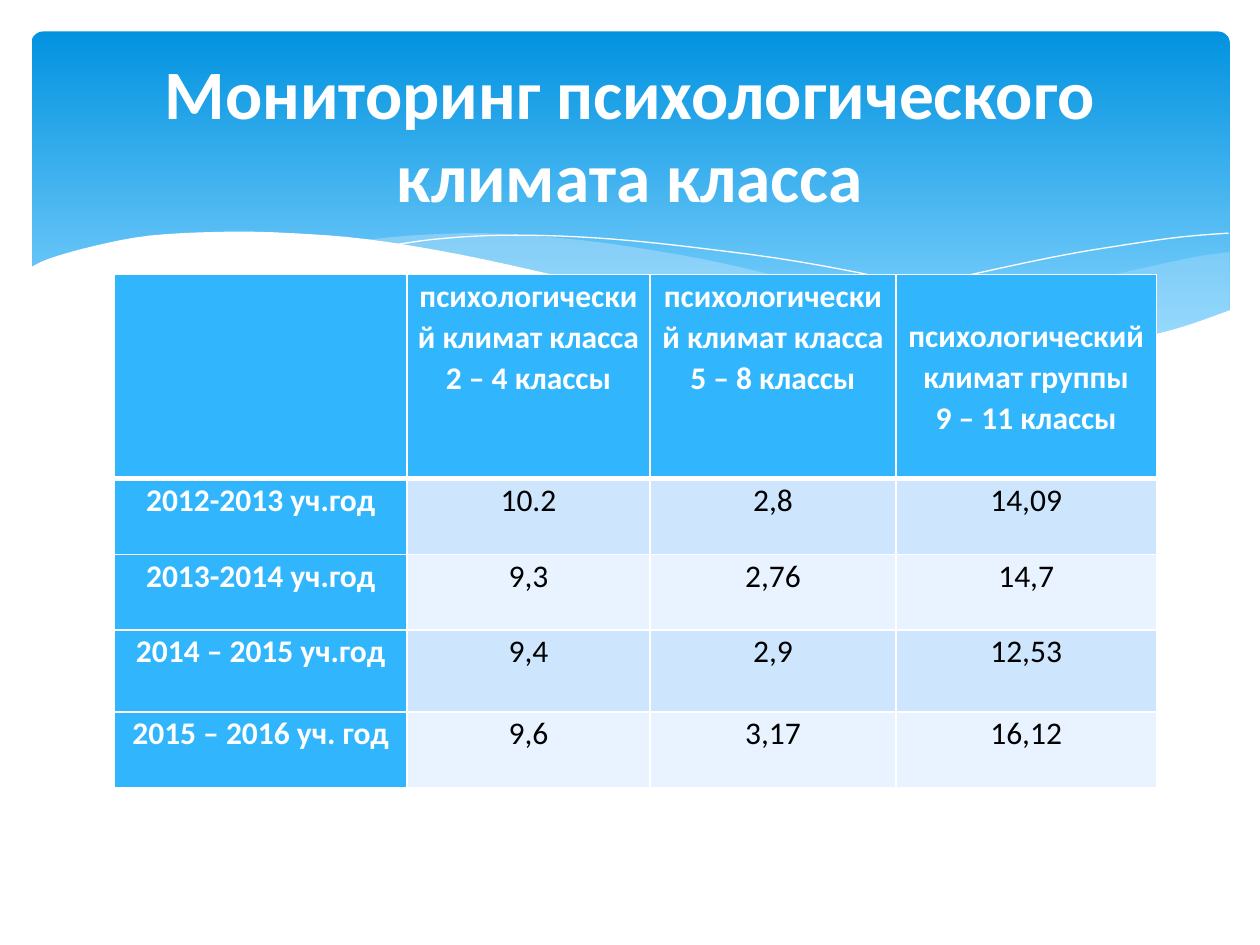
from dataclasses import dataclass

from lxml import etree
from pptx import Presentation
from pptx.dml.color import RGBColor
from pptx.enum.shapes import MSO_SHAPE
from pptx.enum.text import MSO_ANCHOR, PP_ALIGN
from pptx.oxml.ns import qn
from pptx.slide import Slide
from pptx.util import Inches, Pt

ROUNDED = MSO_SHAPE.ROUNDED_RECTANGLE
CENTER = PP_ALIGN.CENTER
TOP, MIDDLE = MSO_ANCHOR.TOP, MSO_ANCHOR.MIDDLE

COLORS = {
    "white": "FFFFFF", "black": "000000", "sky_dark": "0293E0", "sky_light": "83D3FE",
    "wave": "C6E7FC", "header": "31B6FD", "band_a": "CEE5FE", "band_b": "E8F3FF",
}

RIGHT_WAVE = [(9.76, 2), (9.48, 2.04), (9.06, 2.13), (8.61, 2.23), (8.05, 2.37),
              (7.53, 2.48), (7.06, 2.57), (6.61, 2.65)]
RIGHT_WAVE_BOTTOM = [(6.61, 2.65), (7.05, 2.71), (7.57, 2.76), (8.03, 2.78), (8.54, 2.76),
                     (8.97, 2.7), (9.35, 2.62), (9.63, 2.52), (9.76, 2.47)]
MIDDLE_WAVE = [(8.93, 2.73), (8.37, 2.65), (7.75, 2.54), (7.06, 2.4), (6.29, 2.22),
               (5.69, 2.08), (5.14, 1.98), (4.65, 1.91), (4.2, 1.87), (3.8, 1.85),
               (3.44, 1.86), (3.13, 1.88), (2.86, 1.91)]
MIDDLE_WAVE_BOTTOM = [(2.86, 1.91), (3.42, 1.99), (4.04, 2.11), (4.49, 2.22), (5.3, 2.4),
                      (6.01, 2.55), (6.65, 2.66), (7.22, 2.74), (7.73, 2.77), (8.18, 2.78),
                      (8.57, 2.77), (8.93, 2.73)]
LEFT_CREST = [(3.09, 1.95), (3.44, 1.9), (3.87, 1.87), (4.33, 1.87), (4.89, 1.9),
              (5.56, 1.97), (6.36, 2.08), (7.27, 2.26), (8.31, 2.51), (9.07, 2.72)]
RIGHT_CREST = [(6.13, 2.57), (6.72, 2.41), (7.48, 2.23), (8.36, 2.04), (8.95, 1.94),
               (9.38, 1.88), (9.75, 1.85)]
FRONT_WAVE = [(9.77, 2.46), (9.3, 2.62), (8.75, 2.73), (8.09, 2.77), (7.26, 2.72),
              (6.26, 2.58), (5.29, 2.39), (4.47, 2.2), (3.65, 2.02), (2.92, 1.9),
              (2.3, 1.85), (1.77, 1.84), (1.19, 1.87), (0.76, 1.95), (0.4, 2.05),
              (0.23, 2.13)]

COLUMNS = [2.32, 1.93, 1.95, 2.07]
ROWS = [1.62, 0.6, 0.6, 0.65, 0.6]
CELLS = [
    ["", "психологический климат класса\n2 – 4 классы",
     "психологический климат класса\n5 – 8 классы",
     "психологический климат группы\n9 – 11 классы"],
    ["2012-2013 уч.год", "10.2", "2,8", "14,09"],
    ["2013-2014 уч.год", "9,3", "2,76", "14,7"],
    ["2014 – 2015 уч.год", "9,4", "2,9", "12,53"],
    ["2015 – 2016 уч. год", "9,6", "3,17", "16,12"],
]


def rgb(name):
    return RGBColor.from_string(COLORS[name])


def curve(knots, steps=4):
    """Return points of a Catmull-Rom spline through the knots."""
    ends = [knots[0], *knots, knots[-1]]
    points = [knots[0]]
    for a, b, c, d in zip(ends, ends[1:], ends[2:], ends[3:]):
        for i in range(1, steps + 1):
            t = i / steps
            points.append(tuple(
                (2 * q + (r - p) * t + (2 * p - 5 * q + 4 * r - s) * t ** 2
                 + (3 * q - p - 3 * r + s) * t ** 3) / 2
                for p, q, r, s in zip(a, b, c, d)))
    return points


@dataclass
class Painter:
    """Draws styled elements on the current slide."""
    s: Slide
    font: str = "Calibri"

    def format_text(self, tf, size, color, bold, spacing=1.0):
        tf.word_wrap = True
        for p in tf.paragraphs:
            p.alignment = CENTER
            p.line_spacing = spacing
            for r in p.runs:
                r.font.name, r.font.size, r.font.bold = self.font, Pt(size), bold
                r.font.color.rgb = rgb(color)

    def banner(self, x, y, w, h):
        sp = self.s.shapes.add_shape(ROUNDED, Inches(x), Inches(y), Inches(w), Inches(h))
        sp.shadow.inherit = False
        sp.adjustments[0] = 0.034
        sp.line.fill.background()
        sp.fill.gradient()
        sp.fill.gradient_angle = 270
        stops = zip(sp.fill.gradient_stops, [0, 0.9], ["sky_dark", "sky_light"])
        for stop, position, color in stops:
            stop.position = position
            stop.color.rgb = rgb(color)

    def outline(self, points, close):
        start, *rest = [(Inches(x), Inches(y)) for x, y in points]
        builder = self.s.shapes.build_freeform(*start)
        builder.add_line_segments(rest, close=close)
        sp = builder.convert_to_shape()
        sp.shadow.inherit = False
        return sp

    def wave(self, points, color, opacity=100):
        sp = self.outline(points, True)
        sp.line.fill.background()
        sp.fill.solid()
        sp.fill.fore_color.rgb = rgb(color)
        if opacity < 100:
            clr = sp.fill._xPr.find(qn("a:solidFill"))[0]
            etree.SubElement(clr, qn("a:alpha"), val=str(opacity * 1000))

    def crest(self, knots):
        sp = self.outline(curve(knots), False)
        sp.fill.background()
        sp.line.color.rgb = rgb("white")
        sp.line.width = Pt(0)

    def title(self, text, x, y, w, h):
        tf = self.s.shapes.add_textbox(Inches(x), Inches(y), Inches(w), Inches(h)).text_frame
        tf.text = text
        tf.vertical_anchor = MIDDLE
        self.format_text(tf, 39.6, "white", True)

    def borders(self, cell, widths):
        for side, width in widths.items():
            ln = etree.SubElement(cell._tc.get_or_add_tcPr(), qn(f"a:ln{side}"), w=str(Pt(width)))
            fill = etree.SubElement(ln, qn("a:solidFill"))
            etree.SubElement(fill, qn("a:srgbClr"), val=COLORS["white"])

    def table(self, x, y, columns, rows, texts):
        tbl = self.s.shapes.add_table(len(rows), len(columns), Inches(x), Inches(y),
                                      Inches(sum(columns)), Inches(sum(rows))).table
        for column, width in zip(tbl.columns, columns):
            column.width = Inches(width)
        for i, height in enumerate(rows):
            tbl.rows[i].height = Inches(height)
            for j, text in enumerate(texts[i]):
                cell = tbl.cell(i, j)
                heading = i == 0 or j == 0
                self.borders(cell, {"L": 1, "R": 1, "T": 3 if i == 1 else 1,
                                    "B": 3 if i == 0 else 1})
                cell.fill.solid()
                band = "band_a" if i % 2 else "band_b"
                cell.fill.fore_color.rgb = rgb("header" if heading else band)
                cell.margin_left = cell.margin_right = Inches(0.07)
                cell.margin_top = cell.margin_bottom = 0
                last_heading = i == 0 and j == len(columns) - 1
                cell.vertical_anchor = MIDDLE if last_heading else TOP
                cell.text_frame.text = text
                self.format_text(cell.text_frame, 18, "white" if heading else "black",
                                 heading, 1.07)


def main():
    prs = Presentation()
    prs.slide_width, prs.slide_height = Inches(10), Inches(7.5)
    painter = Painter(prs.slides.add_slide(prs.slide_layouts[6]))
    painter.banner(0.25, 0.25, 9.51, 2.7)
    painter.wave(curve(RIGHT_WAVE) + curve(RIGHT_WAVE_BOTTOM), "wave", 29)
    painter.wave(curve(MIDDLE_WAVE) + curve(MIDDLE_WAVE_BOTTOM), "wave", 40)
    painter.crest(LEFT_CREST)
    painter.crest(RIGHT_CREST)
    painter.wave(curve(FRONT_WAVE) + [(0.23, 3.29), (9.77, 3.29)], "white")
    painter.table(0.91, 2.18, COLUMNS, ROWS, CELLS)
    painter.title("Мониторинг психологического климата класса", 0.5, 0.37, 9, 1.37)
    prs.save("out.pptx")


if __name__ == "__main__":
    main()
